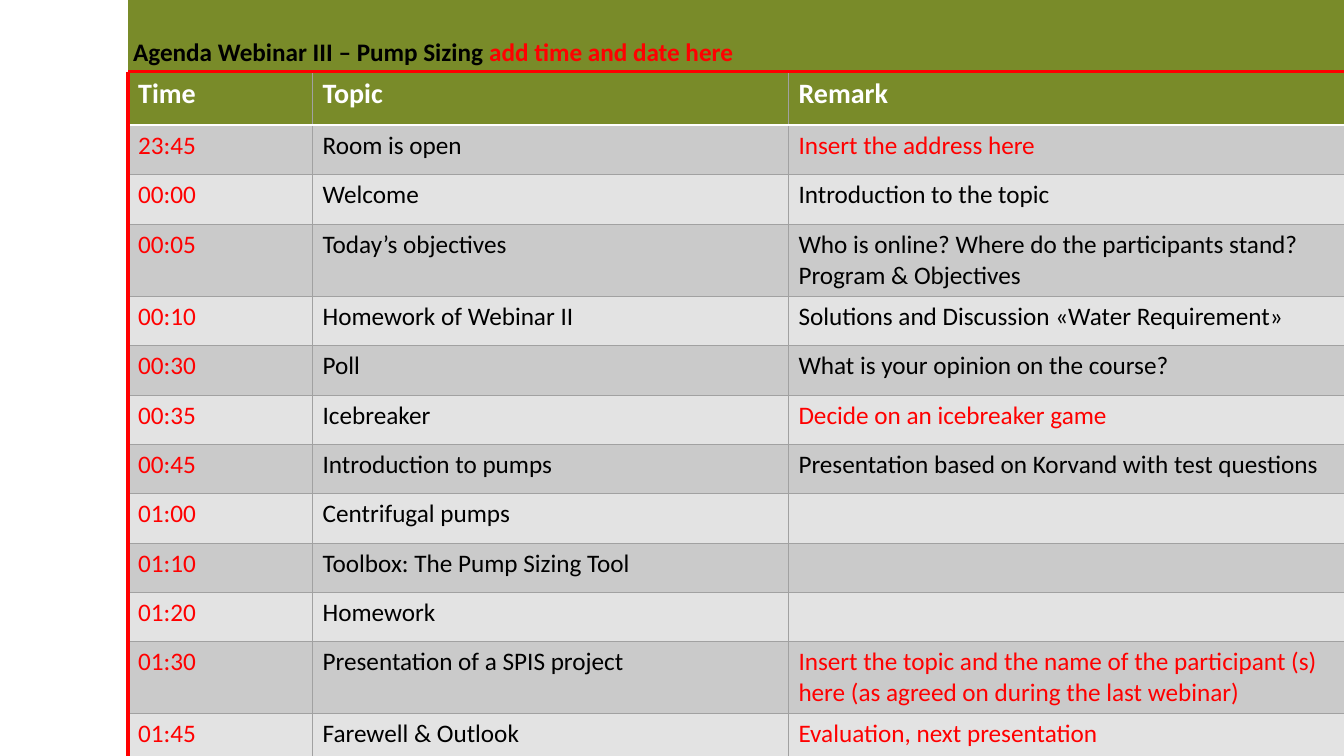
from lxml.etree import SubElement
from pptx import Presentation
from pptx.dml.color import RGBColor
from pptx.enum.shapes import MSO_CONNECTOR as Connector, MSO_SHAPE as Shape
from pptx.enum.text import MSO_ANCHOR as Anchor, PP_ALIGN as Align
from pptx.oxml.ns import qn
from pptx.util import Inches, Pt

OLIVE = RGBColor(0x79, 0x8B, 0x29)
RED = RGBColor(0xFF, 0x00, 0x00)
BLACK = RGBColor(0x00, 0x00, 0x00)
WHITE = RGBColor(0xFF, 0xFF, 0xFF)
GRID_GREY = RGBColor(0xA1, 0xA1, 0xA1)
DARK_BAND = RGBColor(0xCA, 0xCA, 0xCA)
LIGHT_BAND = RGBColor(0xE3, 0xE3, 0xE3)

# The page grid has 1333 columns and 750 rows.
COLUMNS, ROWS = 1333, 750
LEFT, TOP = 127, 71
COLUMN_WIDTHS = (183, 472, 551)
HEADER_HEIGHT, ONE_LINE, TWO_LINES = 53, 49, 70

HEADINGS = ("Time", "Topic", "Remark")
# Time, topic, remark, colour of the remark, height of the row
AGENDA = [
    ("23:45", "Room is open", "Insert the address here", RED, ONE_LINE),
    ("00:00", "Welcome", "Introduction to the topic", BLACK, ONE_LINE + 1),
    ("00:05", "Today’s objectives",
     "Who is online? Where do the participants stand? Program & Objectives",
     BLACK, TWO_LINES),
    ("00:10", "Homework of Webinar II",
     "Solutions and Discussion «Water Requirement»", BLACK, ONE_LINE),
    ("00:30", "Poll", "What is your opinion on the course?", BLACK, ONE_LINE),
    ("00:35", "Icebreaker", "Decide on an icebreaker game", RED, ONE_LINE),
    ("00:45", "Introduction to pumps",
     "Presentation based on Korvand with test questions", BLACK, ONE_LINE),
    ("01:00", "Centrifugal pumps", "", BLACK, ONE_LINE),
    ("01:10", "Toolbox: The Pump Sizing Tool", "", BLACK, ONE_LINE),
    ("01:20", "Homework", "", BLACK, ONE_LINE),
    ("01:30", "Presentation of a SPIS project",
     "Insert the topic and the name of the participant (s) here "
     "(as agreed on during the last webinar)", RED, TWO_LINES),
    ("01:45", "Farewell & Outlook", "Evaluation, next presentation", RED, ONE_LINE),
]


class AgendaPage:
    font_name = "Calibri"
    text_size = 18
    heading_size = 20

    def __init__(self, deck):
        self.page = deck.slides.add_slide(deck.slide_layouts[6])

    def units(self, *counts):
        """Turn counts of grid columns or rows into lengths."""
        return [Inches(count / 100) for count in counts]

    def set_font(self, font, size, color=None, bold=False):
        font.name, font.size, font.bold = self.font_name, Pt(size), bold
        if color is not None:
            font.color.rgb = color

    def title_bar(self, left, top, width, height, spans):
        bar = self.page.shapes.add_shape(
            Shape.RECTANGLE, *self.units(left, top, width, height))
        bar.shadow.inherit = False
        bar.fill.solid()
        bar.fill.fore_color.rgb = OLIVE
        bar.line.fill.background()
        frame = bar.text_frame
        frame.word_wrap = True
        frame.vertical_anchor = Anchor.BOTTOM
        frame.margin_left = frame.margin_right = Inches(0.05)
        frame.margin_top = frame.margin_bottom = Inches(0.05)
        para = frame.paragraphs[0]
        para.alignment = Align.LEFT
        self.set_font(para.font, self.text_size, bold=True)
        for text, color in spans:
            span = para.add_run()
            span.text = text
            span.font.color.rgb = color

    def line(self, start, end):
        rule = self.page.shapes.add_connector(
            Connector.STRAIGHT, *self.units(*start, *end))
        rule.line.color.rgb = RED
        rule.line.width = Pt(2.25)
        SubElement(rule._element.spPr, qn("a:effectLst"))

    def borders(self, cell, **special):
        """Draw thin grey edges, except those given as edge=(color, points)."""
        properties = cell._tc.get_or_add_tcPr()
        for edge in ("lnL", "lnR", "lnT", "lnB"):
            color, points = special.get(edge, (GRID_GREY, 0.75))
            border = SubElement(properties, qn(f"a:{edge}"), w=str(Pt(points)))
            fill = SubElement(border, qn("a:solidFill"))
            SubElement(fill, qn("a:srgbClr"), val=str(color))

    def cell(self, cell, text, size, color, fill, bold=False, **edges):
        self.borders(cell, **edges)
        cell.fill.solid()
        cell.fill.fore_color.rgb = fill
        para = cell.text_frame.paragraphs[0]
        if text:
            para.text = text
        self.set_font(para.font, size, color, bold)

    def agenda_table(self, left, top):
        heights = [HEADER_HEIGHT] + [entry[-1] for entry in AGENDA]
        table = self.page.shapes.add_table(
            len(heights), len(COLUMN_WIDTHS),
            *self.units(left, top, sum(COLUMN_WIDTHS), sum(heights))).table
        for column, width in zip(table.columns, self.units(*COLUMN_WIDTHS)):
            column.width = width
        for row, height in zip(table.rows, self.units(*heights)):
            row.height = height

        header_rule = (WHITE, 2)
        for column, heading in enumerate(HEADINGS):
            self.cell(table.cell(0, column), heading, self.heading_size,
                      WHITE, OLIVE, bold=True, lnB=header_rule)
        for row, (time, topic, remark, remark_color, _) in enumerate(AGENDA, 1):
            band = DARK_BAND if row % 2 else LIGHT_BAND
            edges = {"lnT": header_rule} if row == 1 else {}
            entries = ((time, RED), (topic, BLACK), (remark, remark_color))
            for column, (text, color) in enumerate(entries):
                self.cell(table.cell(row, column), text, self.text_size,
                          color, band, **edges)


def main():
    deck = Presentation()
    deck.slide_width, deck.slide_height = Inches(COLUMNS / 100), Inches(ROWS / 100)
    agenda = AgendaPage(deck)
    agenda.agenda_table(LEFT, TOP)
    agenda.title_bar(LEFT, 0, COLUMNS - LEFT, TOP, [
        ("Agenda Webinar III – Pump Sizing ", BLACK),
        ("add time and date here", RED),
    ])
    agenda.line((LEFT, TOP), (COLUMNS, TOP))
    agenda.line((LEFT, ROWS), (LEFT, TOP))
    deck.save("out.pptx")


if __name__ == "__main__":
    main()
